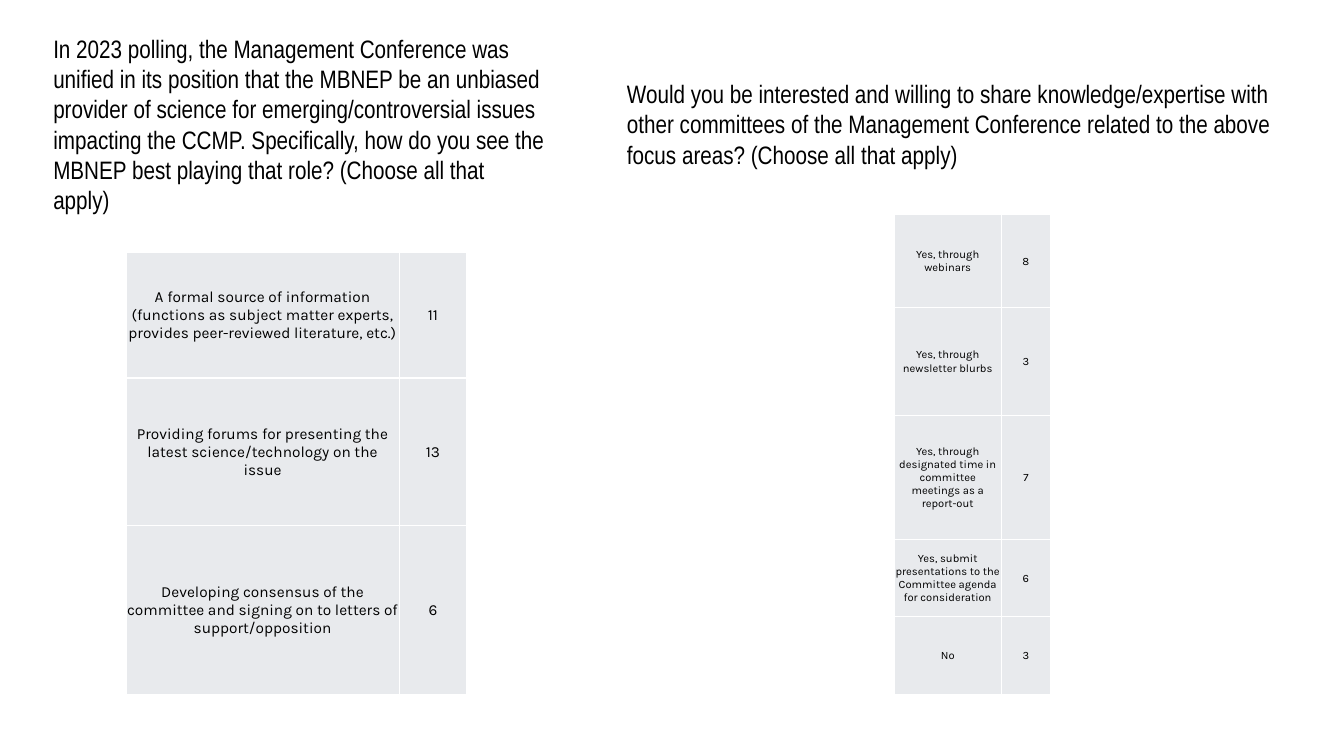
from lxml import etree
from pptx import Presentation
from pptx.dml.color import RGBColor
from pptx.enum.text import MSO_ANCHOR, MSO_AUTO_SIZE, PP_ALIGN
from pptx.oxml.ns import qn
from pptx.util import Pt

EMU_PER_PX = 9144  # 100 px to the inch
BLACK, WHITE, CELL_GREY = "000000", "FFFFFF", "E8EAED"

ROLE_QUESTION = (
    "In 2023 polling, the Management Conference was unified in its position that "
    "the MBNEP be an unbiased provider of science for emerging/controversial issues "
    "impacting the CCMP. Specifically, how do you see the MBNEP best playing that "
    "role? (Choose all that apply)")
ROLE_VOTES = [
    ("A formal source of information (functions as subject matter experts, "
     "provides peer-reviewed literature, etc.)", 11),
    ("Providing forums for presenting the latest science/technology on the issue", 13),
    ("Developing consensus of the committee and signing on to letters of "
     "support/opposition", 6),
]
SHARING_QUESTION = (
    "Would you be interested and willing to share knowledge/expertise with other "
    "committees of the Management Conference related to the above focus areas? "
    "(Choose all that apply)")
SHARING_VOTES = [
    ("Yes, through webinars", 8),
    ("Yes, through newsletter blurbs", 3),
    ("Yes, through designated time in committee meetings as a report-out", 7),
    ("Yes, submit presentations to the Committee agenda for consideration", 6),
    ("No", 3),
]


def px(n):
    return round(n * EMU_PER_PX)


def color(hex_code):
    return RGBColor.from_string(hex_code)


def add_run(p, text, font, size):
    r = p.add_run()
    r.text = text
    r.font.name = font
    r.font.size = Pt(size)
    r.font.color.rgb = color(BLACK)


def add_question(slide, text, box):
    tf = slide.shapes.add_textbox(*map(px, box)).text_frame
    tf.word_wrap = True
    tf.auto_size = MSO_AUTO_SIZE.SHAPE_TO_FIT_TEXT
    add_run(tf.paragraphs[0], text, "Arial Narrow", 18)


def set_borders(cell, hex_code, width):
    tc_pr = cell._tc.get_or_add_tcPr()
    for i, side in enumerate(("lnL", "lnR", "lnT", "lnB")):
        ln = etree.Element(qn(f"a:{side}"), w=str(Pt(width)))
        fill = etree.SubElement(ln, qn("a:solidFill"))
        etree.SubElement(fill, qn("a:srgbClr"), val=hex_code)
        tc_pr.insert(i, ln)


def style_cell(cell, text, size):
    cell.margin_left = cell.margin_right = cell.margin_top = px(1)
    cell.margin_bottom = 0
    cell.vertical_anchor = MSO_ANCHOR.MIDDLE
    cell.fill.solid()
    cell.fill.fore_color.rgb = color(CELL_GREY)
    set_borders(cell, WHITE, 1)
    p = cell.text_frame.paragraphs[0]
    p.alignment = PP_ALIGN.CENTER
    add_run(p, text, "Karla", size)


def add_votes(slide, votes, left, top, widths, heights, size):
    """Table of answers and vote counts, one answer a row."""
    table = slide.shapes.add_table(
        len(votes), len(widths), px(left), px(top),
        px(sum(widths)), px(sum(heights))).table
    table.first_row = table.horz_banding = False
    for column, width in zip(table.columns, widths):
        column.width = px(width)
    for row, height, vote in zip(table.rows, heights, votes):
        row.height = px(height)
        for cell, value in zip(row.cells, vote):
            style_cell(cell, str(value), size)


def main():
    prs = Presentation()
    prs.slide_width, prs.slide_height = px(1333), px(750)
    slide = prs.slides.add_slide(prs.slide_layouts[6])
    add_question(slide, ROLE_QUESTION, (43, 28, 509, 192))
    add_votes(slide, ROLE_VOTES, 125, 250, (271, 67), (125, 146, 168), 11)
    add_question(slide, SHARING_QUESTION, (612, 73, 667, 101))
    add_votes(slide, SHARING_VOTES, 887, 213, (106, 49), (92, 107, 123, 77, 77), 8)
    prs.save("out.pptx")


if __name__ == "__main__":
    main()
